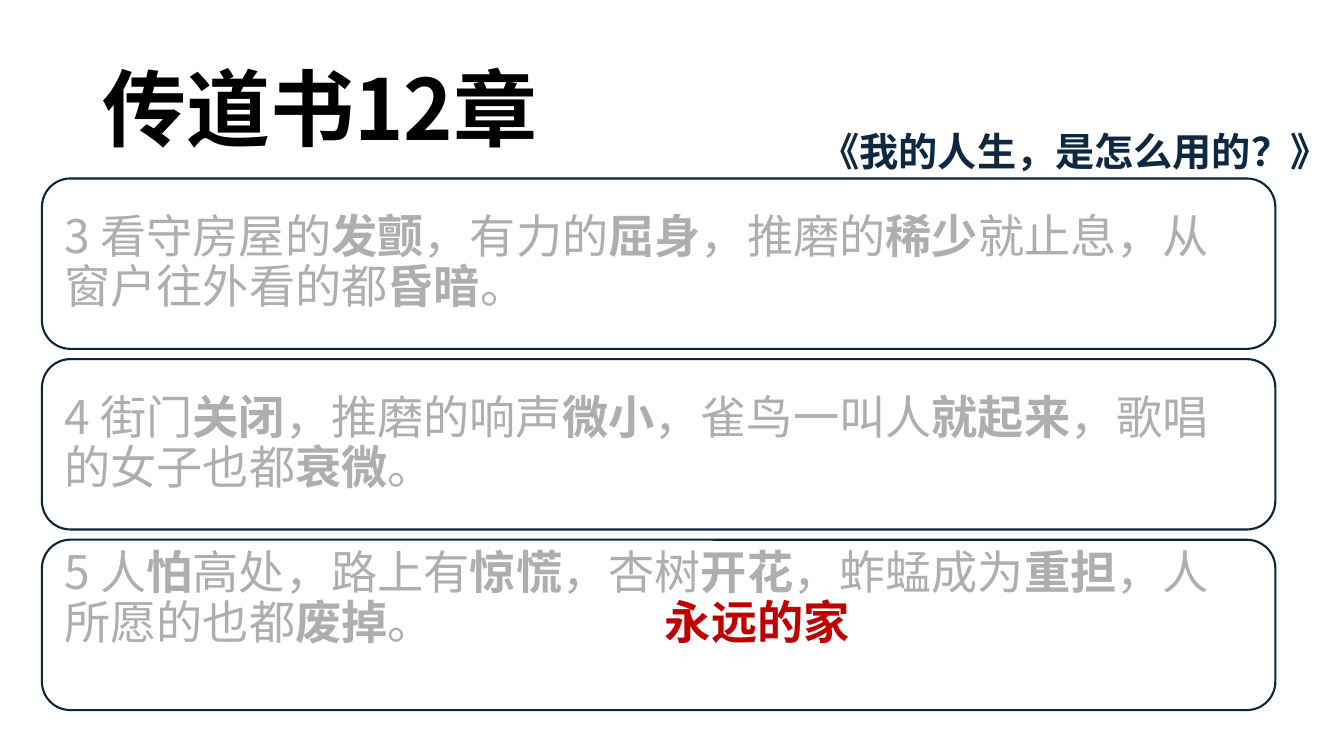
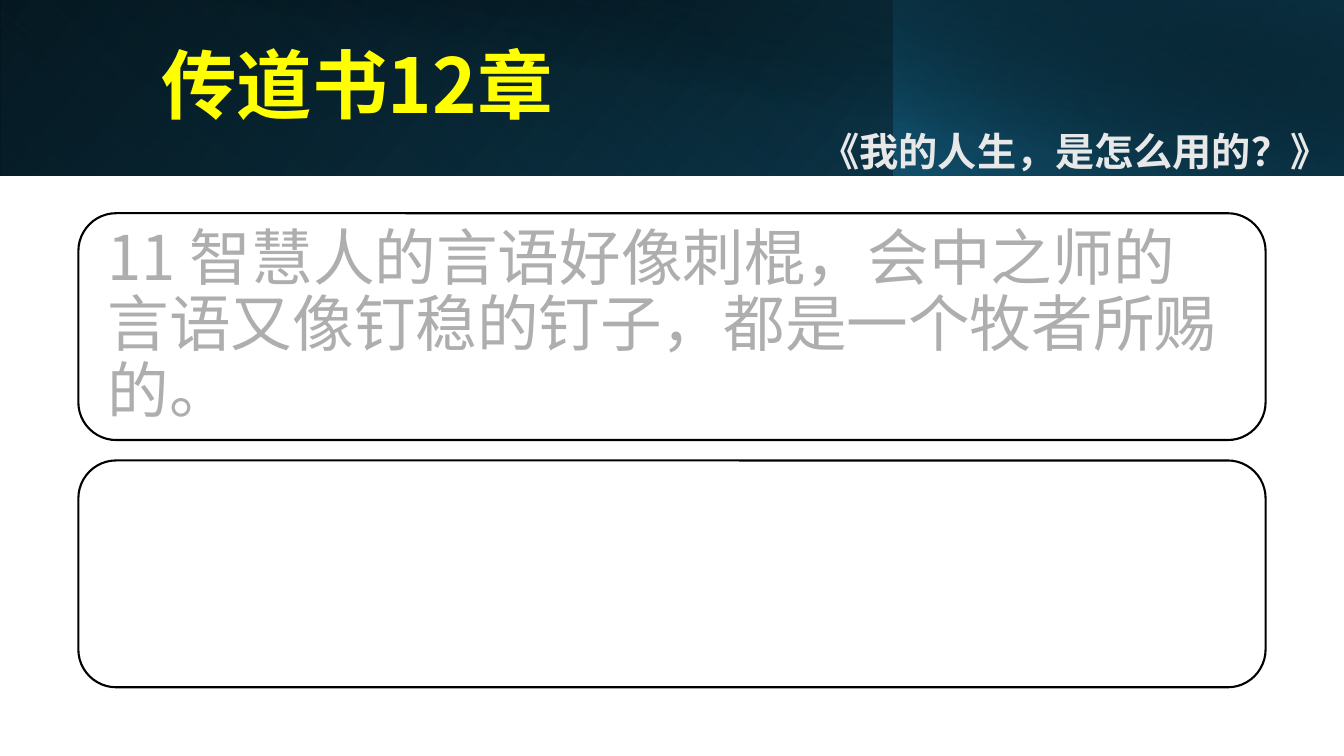
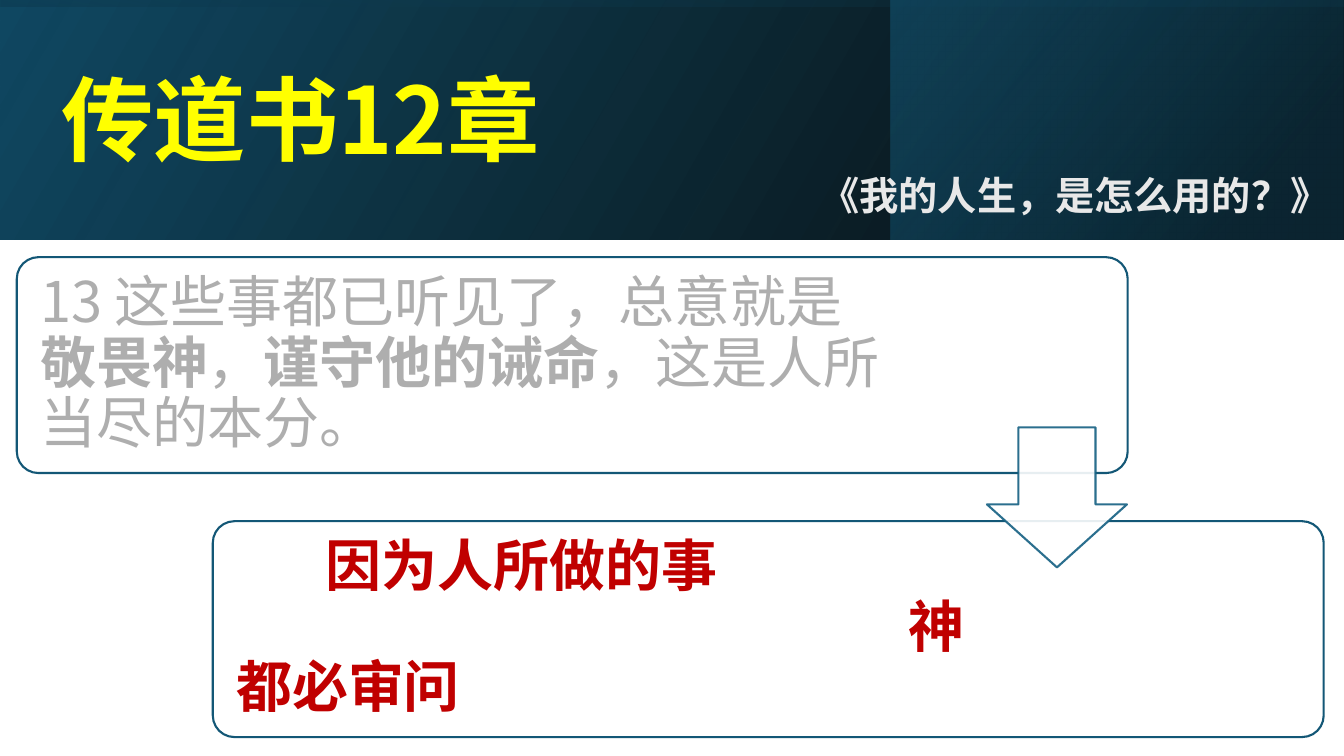
import collections

import lxml.etree
import pptx
import pptx.dml.color
import pptx.enum.shapes
import pptx.enum.text
import pptx.oxml
import pptx.oxml.ns
import pptx.util

Pt = pptx.util.Pt
SHAPES = pptx.enum.shapes.MSO_SHAPE
qn = pptx.oxml.ns.qn

SLIDE_W, SLIDE_H = 960, 540
FONT = "Noto Sans CJK SC"
TITLE = "传道书12章"
SERMON = "《我的人生，是怎么用的？》"

WHITE, BLACK = "FFFFFF", "000000"
GREY, RED, YELLOW = "AEAEAE", "C00000", "FFFF00"
NAVY, PALE = "0E2841", "E8E8E8"
TEAL, DEEP_TEAL, DARK_TEAL = "156082", "104862", "0B3041"
VERSE_LINE, STEP_LINE = "0D243B", "135776"

# runs are (text, colour, bold); indent is that of the first line
Paragraph = collections.namedtuple("Paragraph", "runs indent tab", defaults=(0, 0))


def rgb(hex_colour):
    return pptx.dml.color.RGBColor.from_string(hex_colour)


def add_run(paragraph, text, size, colour, bold):
    run = paragraph.add_run()
    run.text = text
    run.font.size = Pt(size)
    run.font.bold = bold
    run.font.color.rgb = rgb(colour)
    run.font.name = FONT
    east_asian = lxml.etree.SubElement(run.font._element, qn("a:ea"))
    east_asian.set("typeface", FONT)


def write(frame, content, size, line_spacing=None):
    frame.word_wrap = True
    frame.vertical_anchor = pptx.enum.text.MSO_ANCHOR.MIDDLE
    for index, (runs, indent, tab) in enumerate(content):
        paragraph = frame.add_paragraph() if index else frame.paragraphs[0]
        paragraph.alignment = pptx.enum.text.PP_ALIGN.LEFT
        if line_spacing:
            paragraph.line_spacing = line_spacing
        properties = paragraph._p.get_or_add_pPr()
        if indent:
            properties.set("marL", "0")
            properties.set("indent", str(Pt(indent)))
        if tab:
            tabs = lxml.etree.SubElement(properties, qn("a:tabLst"))
            lxml.etree.SubElement(tabs, qn("a:tab"), pos=str(Pt(tab)), algn="l")
        for text, colour, bold in runs:
            add_run(paragraph, text, size, colour, bold)


def add_label(slide, box, text, size, colour, line_spacing=None):
    label = slide.shapes.add_textbox(*map(Pt, box))
    write(label.text_frame, [Paragraph([(text, colour, True)])], size, line_spacing)


def add_title(slide, box, size, colour):
    add_label(slide, box, TITLE, size, colour, 0.9)


def add_sermon_name(slide, top, colour):
    add_label(slide, (579, top, 380, 41), SERMON, 28, colour)


def add_plain_shape(slide, kind, box, adjustments=()):
    shape = slide.shapes.add_shape(kind, *map(Pt, box))
    shape.shadow.inherit = False
    for index, value in enumerate(adjustments):
        shape.adjustments[index] = value
    return shape


def set_fill_and_line(shape, fill, line):
    shape.fill.solid()
    shape.fill.fore_color.rgb = rgb(fill)
    shape.line.color.rgb = rgb(line)
    shape.line.width = Pt(1.5)


def add_card(slide, box, line, content, size, insets, corner=0.1667):
    """Rounded verse card; insets are left, top, right, bottom."""
    card = add_plain_shape(slide, SHAPES.ROUNDED_RECTANGLE, box, [corner])
    set_fill_and_line(card, WHITE, line)
    frame = card.text_frame
    (frame.margin_left, frame.margin_top,
     frame.margin_right, frame.margin_bottom) = map(Pt, insets)
    write(frame, content, size, 0.9)


def set_opacity(colour_element, percent):
    lxml.etree.SubElement(colour_element, qn("a:alpha"), val=str(percent * 1000))


def add_gradient(slide, box, stops, angle, flip=True, rotation=0):
    """Borderless rectangle; stops are (position %, colour, opacity %)."""
    panel = add_plain_shape(slide, SHAPES.RECTANGLE, box)
    panel.line.fill.background()
    panel.rotation = rotation
    properties = panel._element.spPr
    if flip:
        properties.find(qn("a:xfrm")).set("flipH", "1")
    gradient = lxml.etree.Element(qn("a:gradFill"), rotWithShape="1")
    stop_list = lxml.etree.SubElement(gradient, qn("a:gsLst"))
    for position, colour, opacity in stops:
        stop = lxml.etree.SubElement(stop_list, qn("a:gs"), pos=str(position * 1000))
        tint = lxml.etree.SubElement(stop, qn("a:srgbClr"), val=colour)
        set_opacity(tint, opacity)
    lxml.etree.SubElement(gradient, qn("a:lin"), ang=str(angle * 60000), scaled="0")
    properties.find(qn("a:prstGeom")).addnext(gradient)


def add_step_arrow(slide, box):
    arrow = add_plain_shape(slide, SHAPES.DOWN_ARROW, box, [0.55, 0.45])
    set_fill_and_line(arrow, WHITE, TEAL)
    for colour in arrow._element.spPr.iter(qn("a:srgbClr")):
        set_opacity(colour, 90)


def verse(*pieces):
    """Grey runs, plain and bold by turns."""
    return [(text, GREY, index % 2 == 1) for index, text in enumerate(pieces)]


def answer(text):
    return [(text, RED, True)]


def build_verses_3_to_5(slide):
    add_title(slide, (66, 28.8, 828, 104.4), 60, BLACK)
    centred, raised = (10, 10, 10, 10), (10, 0, 10, 35.7)
    verses = [
        (Paragraph(verse("3 看守房屋的", "发颤", "，有力的", "屈身", "，推磨的", "稀少",
                         "就止息，从窗户往外看的都", "昏暗", "。")), centred),
        (Paragraph(verse("4 街门", "关闭", "，推磨的响声", "微小", "，雀鸟一叫人",
                         "就起来", "，歌唱的女子也都", "衰微", "。")), centred),
        (Paragraph(verse("5 人", "怕", "高处，路上有", "惊慌", "，杏树", "开花",
                         "，蚱蜢成为", "重担", "，人所愿的也都", "废掉", "。")
                   + answer("\t永远的家"), tab=429), raised),
    ]
    for row, (paragraph, insets) in enumerate(verses):
        add_card(slide, (30, 127.5 + row * 129, 881, 121.7), VERSE_LINE,
                 [paragraph], 33, insets)
    add_sermon_name(slide, 87, NAVY)


def build_verse_11(slide):
    band = 125.3
    add_gradient(slide, (0, 0, SLIDE_W, band),
                 [(0, BLACK, 100), (100, DEEP_TEAL, 100)], 140)
    add_gradient(slide, (0, 0, 639, band),
                 [(20, TEAL, 0), (100, DARK_TEAL, 55)], 230, rotation=180)
    add_gradient(slide, (638.6, 0, SLIDE_W - 638.6, band),
                 [(0, TEAL, 66), (100, BLACK, 30)], 220)
    add_gradient(slide, (36, 0, SLIDE_W - 36, band),
                 [(50, BLACK, 0), (99, DARK_TEAL, 52)], 280, flip=False)
    add_title(slide, (108, 23, 779, 81.4), 54, YELLOW)
    verse_11 = Paragraph(verse("11 智慧人的言语好像刺棍，会中之师的言语又像钉稳的钉子，"
                               "都是一个牧者所赐的。"))
    for row, content in enumerate(([verse_11], [])):
        add_card(slide, (56, 152.3 + row * 176.6, 848, 162), BLACK,
                 content, 44, (13, 13, 13, 13))
    add_sermon_name(slide, 87, PALE)


def build_verses_13_to_14(slide):
    band = 171
    add_gradient(slide, (0, 0, SLIDE_W, band),
                 [(0, BLACK, 96), (100, DEEP_TEAL, 100)], 330)
    add_gradient(slide, (636.5, 0, SLIDE_W - 636.5, band),
                 [(19, DARK_TEAL, 68), (100, TEAL, 48)], 320)
    centring = (SLIDE_W - band) / 2
    add_gradient(slide, (centring, -centring, band, SLIDE_W),
                 [(23, DEEP_TEAL, 16), (99, BLACK, 45)], 350, rotation=270)
    add_title(slide, (36.7, 27.4, 878, 123.8), 66, YELLOW)
    steps = [
        ([Paragraph(verse("13 这些事都已听见了，总意就是", "敬畏神", "，",
                          "谨守他的诫命", "，这是人所当尽的本分。"))], 163),
        ([Paragraph(answer("因为人所做的事"), indent=64),
          Paragraph(answer("神都必审问"), indent=480)], 246),
    ]
    for row, (content, right) in enumerate(steps):
        add_card(slide, (12 + row * 140, 183.7 + row * 188.6, 793.5, 154.2),
                 STEP_LINE, content, 40, (12.2, 12.2, right, 12.2), 0.1)
    add_step_arrow(slide, (705, 305.3, 100, 100))
    add_sermon_name(slide, 118.8, PALE)


def main():
    deck = pptx.Presentation()
    deck.slide_width, deck.slide_height = Pt(SLIDE_W), Pt(SLIDE_H)
    for build in (build_verses_3_to_5, build_verse_11, build_verses_13_to_14):
        build(deck.slides.add_slide(deck.slide_layouts[6]))
    deck.save("out.pptx")


if __name__ == "__main__":
    main()
